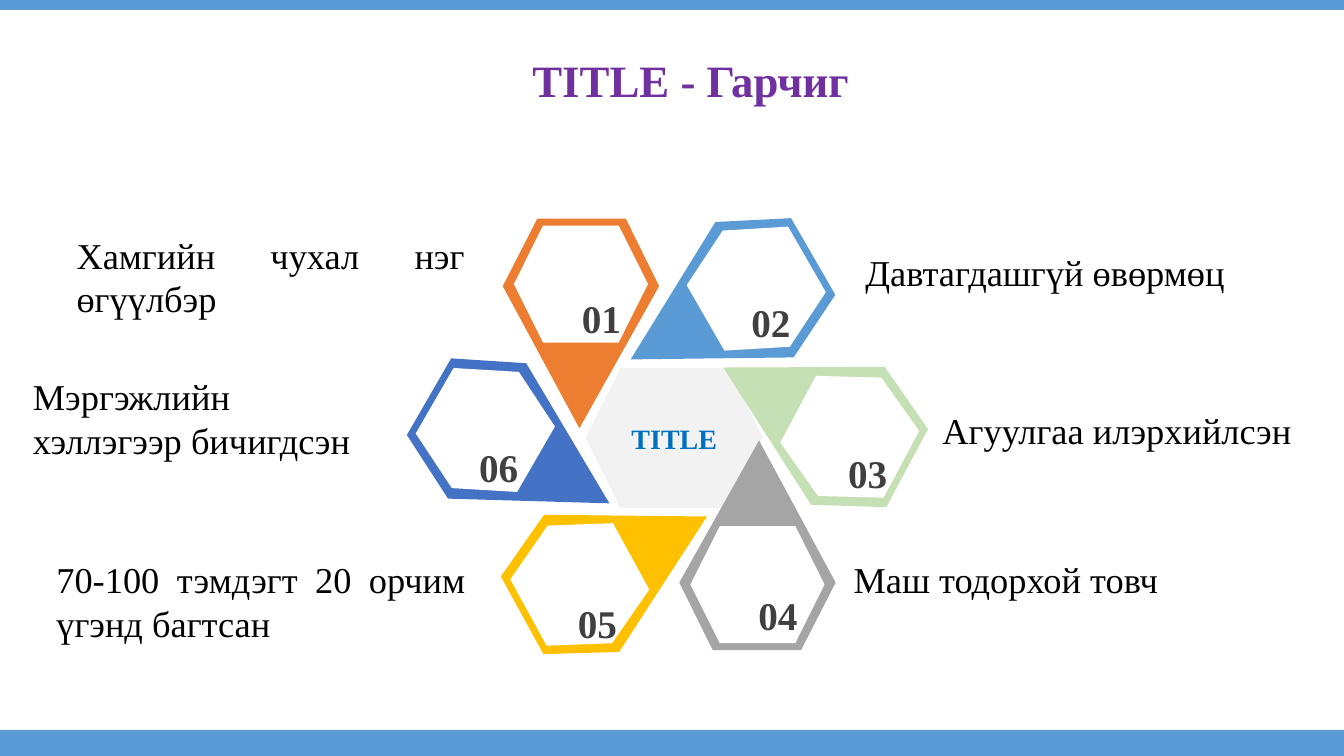
from math import cos, radians, sin

from pptx import Presentation
from pptx.dml.color import RGBColor
from pptx.enum.shapes import MSO_SHAPE as SHAPE
from pptx.enum.text import MSO_ANCHOR as ANCHOR, MSO_AUTO_SIZE as FIT, PP_ALIGN as ALIGN
from pptx.util import Cm, Pt

FONT = "Times New Roman"
WIDTH, HEIGHT = 33.87, 19.05

# One petal outline with its tip up, in cm; every petal is a rotation of it
PETAL_W, PETAL_H = 3.94, 5.28
PETAL = [(3.07, 5.28), (0.84, 5.28), (0, 3.58), (2.01, 0), (3.94, 3.58)]
WINDOW_W, WINDOW_H = 3.38, 2.95
WINDOW_SHIFT = 0.99  # from the petal's centre, away from its tip

# number, colour, petal centre, rotation, number corner, caption, caption box
PETALS = [
    ("01", "ED7D31", (14.64, 8.15), 180, (14.3, 7.24),
     "Хамгийн чухал нэг өгүүлбэр", (1.68, 5.74, 10.29, 2.49)),
    ("02", "5B9BD5", (18.2, 7.77), 240, (18.57, 7.34),
     "Давтагдашгүй өвөрмөц", (21.56, 6.17, 11.13, 1.37)),
    ("03", "C5E0B4", (20.54, 10.54), 298.1, (21.01, 11.13),
     "Агуулгаа илэрхийлсэн", (23.5, 10.16, 10.21, 1.37)),
    ("04", "A5A5A5", (19.09, 13.74), 0, (18.75, 14.73),
     "Маш тодорхой товч", (21.26, 13.92, 11.84, 1.37)),
    ("05", "FFC000", (15.48, 14.25), 61.3, (14.2, 14.91),
     "70-100 тэмдэгт 20 орчим үгэнд багтсан", (1.17, 13.92, 10.82, 2.49)),
    ("06", "4472C4", (13.09, 11.33), 120, (11.71, 11),
     "Мэргэжлийн хэллэгээр бичигдсэн", (0.58, 9.3, 9.32, 2.49)),
]


def paint(sp, color):
    sp.fill.solid()
    sp.fill.fore_color.rgb = RGBColor.from_string(color)
    sp.line.fill.background()
    sp.shadow.inherit = False


def add_shape(s, kind, box, color, rotation=0):
    sp = s.shapes.add_shape(kind, *(Cm(v) for v in box))
    sp.rotation = rotation
    paint(sp, color)
    return sp


def write(sp, text, size, color, bold=False, align=ALIGN.CENTER, anchor=ANCHOR.TOP,
          wrap=True, fit=FIT.NONE, inset=(0.25, 0.13), spacing=None):
    tf = sp.text_frame
    tf.auto_size = fit
    tf.word_wrap = wrap
    tf.vertical_anchor = anchor
    tf.margin_left = tf.margin_right = Cm(inset[0])
    tf.margin_top = tf.margin_bottom = Cm(inset[1])
    p = tf.paragraphs[0]
    p.alignment = align
    p.line_spacing = spacing
    r = p.add_run()
    r.text = text
    r.font.name = FONT
    r.font.size = Pt(size)
    r.font.bold = bold
    r.font.color.rgb = RGBColor.from_string(color)


def add_text(s, box, text, size, color, **style):
    write(s.shapes.add_textbox(*(Cm(v) for v in box)), text, size, color, **style)


def add_petal(s, center, rotation, color):
    cx, cy = center
    points = [(Cm(x), Cm(y)) for x, y in PETAL]
    builder = s.shapes.build_freeform(*points[0])
    builder.add_line_segments(points[1:], close=True)
    sp = builder.convert_to_shape()
    sp.left, sp.top = Cm(cx - PETAL_W / 2), Cm(cy - PETAL_H / 2)
    sp.rotation = rotation
    paint(sp, color)

    # White window inside the petal
    angle = radians(rotation)
    x = cx - WINDOW_SHIFT * sin(angle) - WINDOW_W / 2
    y = cy + WINDOW_SHIFT * cos(angle) - WINDOW_H / 2
    add_shape(s, SHAPE.HEXAGON, (x, y, WINDOW_W, WINDOW_H), "FFFFFF", (rotation + 180) % 360)


def main():
    prs = Presentation()
    prs.slide_width, prs.slide_height = Cm(WIDTH), Cm(HEIGHT)
    s = prs.slides.add_slide(prs.slide_layouts[6])

    # Bars at the top and bottom edges
    for top, height in ((0, 0.25), (18.39, 0.66)):
        add_shape(s, SHAPE.RECTANGLE, (0, top, WIDTH, height), "5B9BD5")

    # Title
    add_text(s, (2.54, 1.14, 29.74, 2.13), "TITLE - Гарчиг", 32, "7030A0",
             bold=True, inset=(0.33, 0.33), spacing=0.9)

    # Centre
    hub = add_shape(s, SHAPE.HEXAGON, (14.76, 9.27, 4.47, 3.53), "F2F2F2")
    write(hub, "TITLE", 20, "0070C0", bold=True, anchor=ANCHOR.MIDDLE, inset=(0.33, 0.18))

    # Petals, then their numbers and captions on top
    for _, color, center, rotation, *_ in PETALS:
        add_petal(s, center, rotation, color)
    for number, _, _, _, corner, caption, box in PETALS:
        add_text(s, (*corner, 1.68, 1.55), number, 28, "404040", bold=True,
                 align=ALIGN.RIGHT, wrap=False, fit=FIT.SHAPE_TO_FIT_TEXT, inset=(0.33, 0.18))
        add_text(s, box, caption, 26, "000000", align=ALIGN.JUSTIFY, fit=FIT.SHAPE_TO_FIT_TEXT)

    prs.save("out.pptx")


if __name__ == "__main__":
    main()
